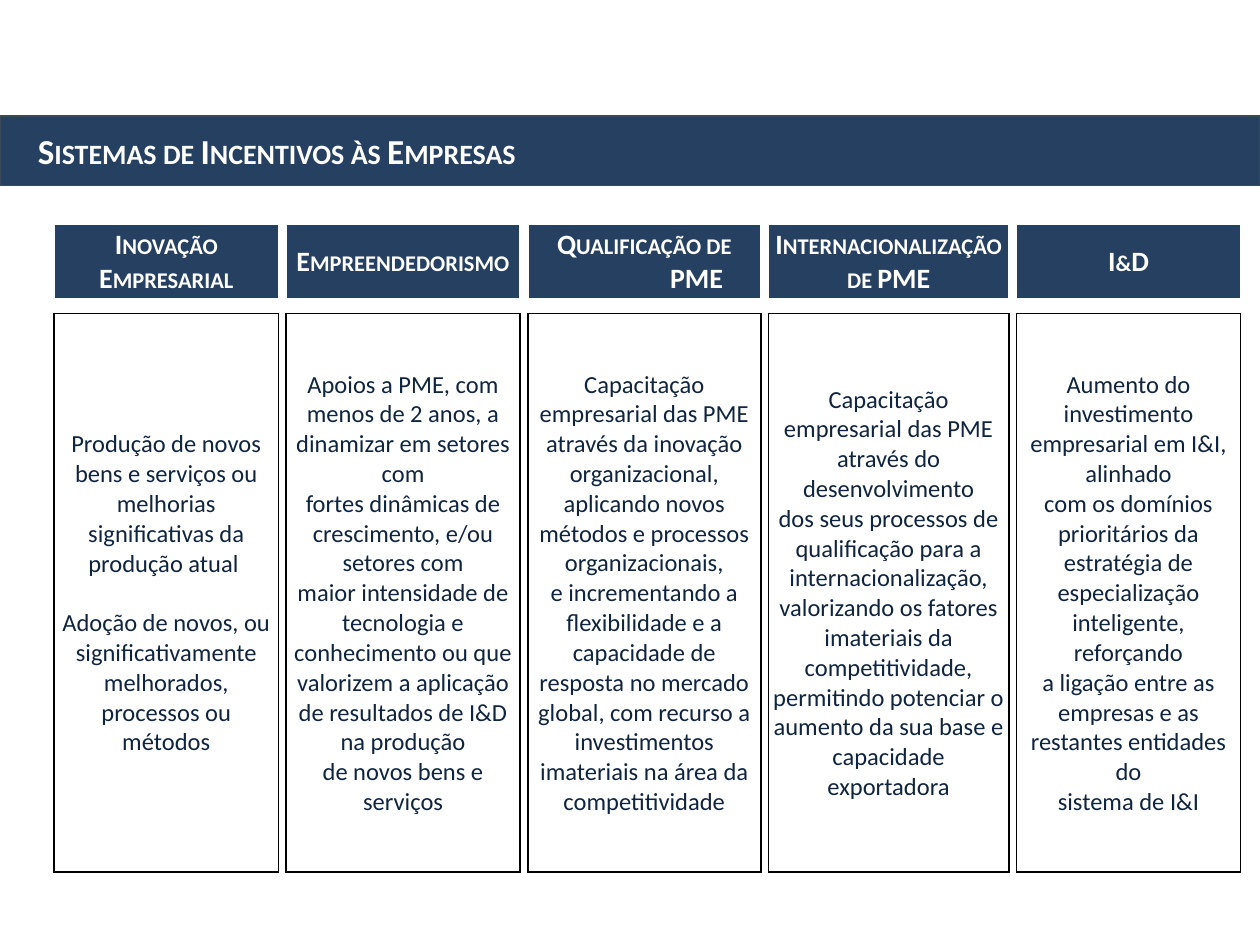
from lxml import etree
from pptx import Presentation
from pptx import util as u
from pptx.dml.color import RGBColor
from pptx.enum import text
from pptx.oxml.ns import qn

NAVY, INK, WHITE, BLACK = "254061", "0F243E", "FFFFFF", "000000"

TITLE = "Sistemas de Incentivos às Empresas"
PROGRAMMES = [
    ("Inovação Empresarial", [
        "Produção de novos bens e serviços ou melhorias\vsignificativas da produção atual ",
        "Adoção de novos, ou significativamente melhorados,\vprocessos ou métodos"]),
    ("Empreendedorismo", [
        "Apoios a PME, com menos de 2 anos, a dinamizar em setores com\v"
        "fortes dinâmicas de crescimento, e/ou setores com\v"
        "maior intensidade de tecnologia e conhecimento ou que\v"
        "valorizem a aplicação de resultados de I&D na produção\v"
        "de novos bens e serviços"]),
    ("Qualificação de PME", [
        "Capacitação\vempresarial das PME através da inovação organizacional,\v"
        "aplicando novos métodos e processos organizacionais,\v"
        "e incrementando a flexibilidade e a capacidade de\v"
        "resposta no mercado global, com recurso a investimentos\v"
        "imateriais na área da competitividade"]),
    ("Internacionalização de PME", [
        "Capacitação\vempresarial das PME através do desenvolvimento\v"
        "dos seus processos de qualificação para a internacionalização,\v"
        "valorizando os fatores imateriais da competitividade,\v"
        "permitindo potenciar o aumento da sua base e capacidade\vexportadora"]),
    ("I&D", [
        "Aumento do investimento empresarial em I&I, alinhado\v"
        "com os domínios prioritários da estratégia de especialização inteligente, reforçando\v"
        "a ligação entre as empresas e as restantes entidades do\vsistema de I&I"]),
]
COLUMN_WIDTHS = [1.78, 0.05, 1.86, 0.06, 1.85, 0.05, 1.91, 0.05, 1.78]
ROW_HEIGHTS = [0.59, 0.12, 4.43]
HANGING = {"Qualificação de PME": 0.41}


def rgb(value):
    return RGBColor.from_string(value)


def write(frame, paragraphs, size, color, bold=False, small_caps=False,
          align=text.PP_ALIGN.CENTER, left=0, first=0, gap=0):
    frame.text = "\n".join(paragraphs)
    for number, paragraph in enumerate(frame.paragraphs):
        paragraph.alignment = align
        paragraph.space_before = u.Pt(gap if number else 0)
        properties = paragraph._p.get_or_add_pPr()
        properties.set("marL", str(u.Inches(left)))
        properties.set("indent", str(u.Inches(first)))
        for run in paragraph.runs:
            run.font.name = "Calibri"
            run.font.size = u.Pt(size)
            run.font.bold = bold
            run.font.color.rgb = rgb(color)
            if small_caps:
                run.font._element.set("cap", "small")


class Deck:
    def __init__(self):
        self.file = Presentation()
        self.file.slide_width = u.Inches(10)
        self.file.slide_height = u.Inches(7.5)
        self.slide = self.file.slides.add_slide(self.file.slide_layouts[5])

    def banner(self, words, left, top, width, height):
        banner = self.slide.shapes.title
        banner.left, banner.top = u.Inches(left), u.Inches(top)
        banner.width, banner.height = u.Inches(width), u.Inches(height)
        banner.fill.solid()
        banner.fill.fore_color.rgb = rgb(NAVY)
        banner.line.color.rgb = rgb("394959")
        banner.line.width = u.Pt(0.75)
        frame = banner.text_frame
        frame.auto_size = text.MSO_AUTO_SIZE.NONE
        frame.vertical_anchor = text.MSO_ANCHOR.MIDDLE
        write(frame, [words], 20, WHITE, bold=True, small_caps=True,
              align=text.PP_ALIGN.LEFT, left=0.2)

    def grid(self, left, top, widths, heights):
        table = self.slide.shapes.add_table(
            len(heights), len(widths), u.Inches(left), u.Inches(top),
            u.Inches(sum(widths)), u.Inches(sum(heights))).table
        table.first_row = table.horz_banding = False
        for column, width in zip(table.columns, widths):
            column.width = u.Inches(width)
        for row, height in zip(table.rows, heights):
            row.height = u.Inches(height)
        return table

    def cell(self, cell, fill=None, black_sides=""):
        cell.margin_left = cell.margin_right = cell.margin_top = u.Inches(0.01)
        cell.margin_bottom = 0
        cell.vertical_anchor = text.MSO_ANCHOR.MIDDLE
        properties = cell._tc.get_or_add_tcPr()
        for side in "LRTB":
            border = etree.SubElement(properties, qn(f"a:ln{side}"), w=str(u.Pt(1)))
            solid = etree.SubElement(border, qn("a:solidFill"))
            etree.SubElement(solid, qn("a:srgbClr"),
                             val=BLACK if side in black_sides else WHITE)
        if fill:
            cell.fill.solid()
            cell.fill.fore_color.rgb = rgb(fill)
        else:
            cell.fill.background()
            paragraph = cell.text_frame.paragraphs[0]._p
            etree.SubElement(paragraph, qn("a:endParaRPr"), sz="100")

    def programmes(self, programmes, left, top):
        table = self.grid(left, top, COLUMN_WIDTHS, ROW_HEIGHTS)
        for column in range(len(COLUMN_WIDTHS)):
            heading, spacer, body = (table.cell(row, column) for row in range(3))
            is_gap = column % 2 == 1
            self.cell(heading, None if is_gap else NAVY)
            self.cell(spacer, black_sides="" if is_gap else "B")
            self.cell(body, black_sides="LR" if is_gap else "LRTB")
            if is_gap:
                continue
            name, aims = programmes[column // 2]
            hanging = HANGING.get(name, 0)
            write(heading.text_frame, [name], 16, WHITE, bold=True,
                  small_caps=True, left=hanging, first=-hanging)
            write(body.text_frame, aims, 14, INK, gap=17)


def main():
    deck = Deck()
    deck.banner(TITLE, 0, 0.92, 10, 0.55)
    deck.programmes(PROGRAMMES, 0.43, 1.78)
    deck.file.save("out.pptx")


if __name__ == "__main__":
    main()
